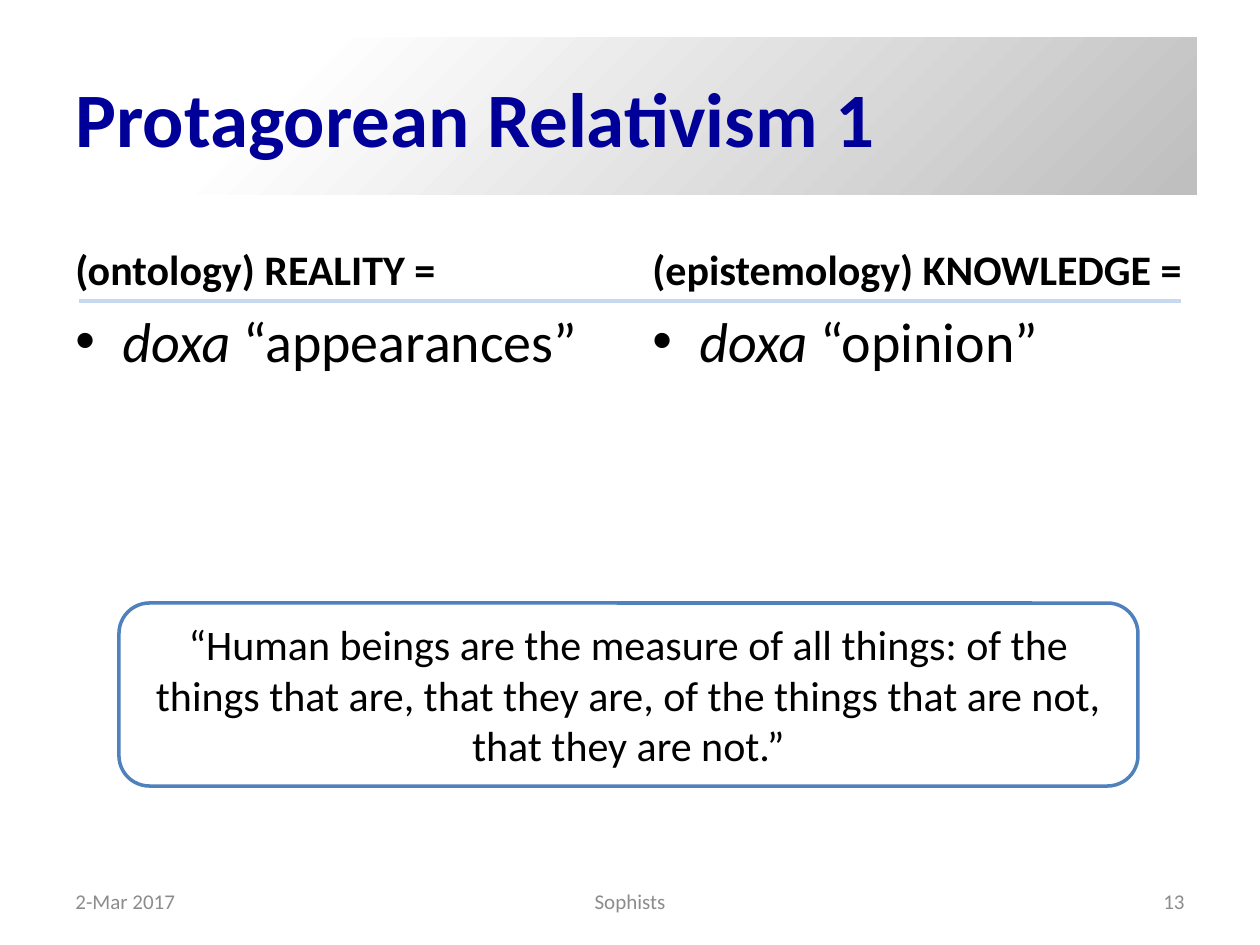
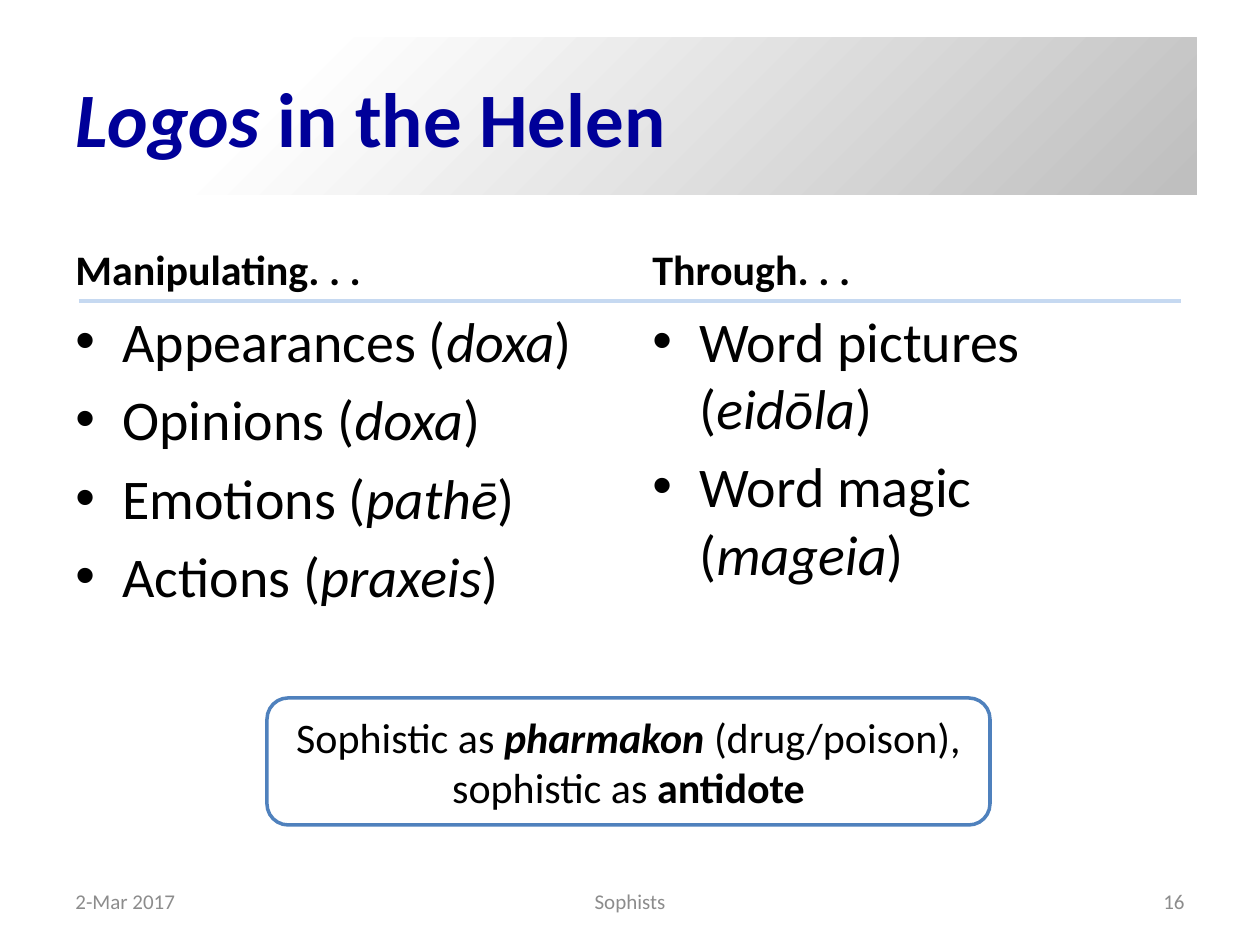
from dataclasses import dataclass

from lxml import etree
from pptx import Presentation
from pptx.dml.color import RGBColor
from pptx.enum.shapes import MSO_CONNECTOR, MSO_SHAPE
from pptx.enum.text import MSO_ANCHOR, PP_ALIGN
from pptx.oxml.ns import qn
from pptx.util import Pt

RECT, ROUND = MSO_SHAPE.RECTANGLE, MSO_SHAPE.ROUNDED_RECTANGLE
STRAIGHT = MSO_CONNECTOR.STRAIGHT
TOP, MIDDLE, BOTTOM = MSO_ANCHOR.TOP, MSO_ANCHOR.MIDDLE, MSO_ANCHOR.BOTTOM
LEFT, CENTER, RIGHT = PP_ALIGN.LEFT, PP_ALIGN.CENTER, PP_ALIGN.RIGHT


@dataclass(frozen=True)
class Theme:
    font: str = "Calibri"
    navy: str = "000099"
    ink: str = "000000"
    gray: str = "8C8C8C"
    paper: str = "FFFFFF"
    silver: str = "BFBFBF"
    rule: str = "C6D9F1"
    edge: str = "4F81BD"
    title: int = 44
    body: int = 32
    head: int = 24
    foot: int = 12
    stroke: int = 2


THEME = Theme()
WIDE, HIGH = 1260, 945
EDGE = 63
COLUMN = 557
INDENT = 47
ITALIC = {"italic": True}
BOLD = {"bold": True}


def px(n):
    return round(n * 914400 / 126)


def rgb(code):
    return RGBColor.from_string(code)


def put(target, values):
    for name, value in values.items():
        setattr(target, name, value)


def write(frame, paras, size, color=THEME.ink, anchor=TOP, align=LEFT,
          space=0, bullet=False, style=None):
    put(frame, {"word_wrap": True, "vertical_anchor": anchor})
    for i, runs in enumerate(paras):
        para = frame.add_paragraph() if i else frame.paragraphs[0]
        put(para, {"alignment": align, "space_before": Pt(space)})
        if bullet:
            mark(para)
        for text, extra in runs:
            if text == "\n":
                para.add_line_break()
                continue
            run = para.add_run()
            run.text = text
            look = {"name": THEME.font, "size": Pt(size)}
            put(run.font, look | (style or {}) | extra)
            run.font.color.rgb = rgb(color)


def mark(para):
    props = para._p.get_or_add_pPr()
    props.set("marL", str(px(INDENT)))
    props.set("indent", str(-px(INDENT)))
    etree.SubElement(props, qn("a:buFont"), typeface="Arial")
    etree.SubElement(props, qn("a:buChar"), char="•")


def label(slide, box, paras, size, **look):
    item = slide.shapes.add_textbox(*map(px, box))
    write(item.text_frame, paras, size, **look)


def shape(slide, kind, box):
    item = slide.shapes.add_shape(kind, *map(px, box))
    item.shadow.inherit = False
    return item


def rule(slide):
    y = px(301)
    line = slide.shapes.add_connector(STRAIGHT, px(79), y, px(WIDE - 79), y)
    line.line.color.rgb = rgb(THEME.rule)
    line.line.width = Pt(THEME.stroke)
    etree.SubElement(line._element.spPr, qn("a:effectLst"))


def banner(slide, runs):
    band = shape(slide, RECT, (EDGE, 38, WIDE - 2 * EDGE, 157))
    band.line.fill.background()
    band.fill.gradient()
    band.fill.gradient_angle = 315
    stops = ((0.2, THEME.paper), (0.99, THEME.silver))
    for stop, (place, color) in zip(band.fill.gradient_stops, stops):
        stop.position = place
        stop.color.rgb = rgb(color)
    write(band.text_frame, [runs], THEME.title, color=THEME.navy,
          anchor=MIDDLE, style=BOLD)


def column(slide, x, head, items):
    label(slide, (x, 212, COLUMN, 88), [[(head, {})]], THEME.head,
          anchor=BOTTOM, style=BOLD)
    label(slide, (x, 300, COLUMN, 544), items, THEME.body,
          space=THEME.body * 0.2, bullet=True)


def quote(slide, box, runs):
    card = shape(slide, ROUND, box)
    card.fill.solid()
    card.fill.fore_color.rgb = rgb(THEME.paper)
    card.line.color.rgb = rgb(THEME.edge)
    card.line.width = Pt(THEME.stroke)
    write(card.text_frame, [runs], THEME.head, anchor=MIDDLE, align=CENTER,
          space=THEME.head / 2)


def footer(slide, page):
    side, mid = 294, 400
    parts = (
        (EDGE, side, "2-Mar 2017", LEFT),
        ((WIDE - mid) // 2, mid, "Sophists", CENTER),
        (WIDE - EDGE - side, side, page, RIGHT),
    )
    for x, width, text, align in parts:
        label(slide, (x, 876, width, 50), [[(text, {})]], THEME.foot,
              color=THEME.gray, anchor=MIDDLE, align=align)


def build(deck, title, columns, box, saying, page):
    slide = deck.slides.add_slide(deck.slide_layouts[6])
    rule(slide)
    banner(slide, title)
    for x, (head, items) in zip((EDGE, WIDE - EDGE - COLUMN), columns):
        column(slide, x, head, items)
    quote(slide, box, saying)
    footer(slide, page)


def gloss(word, greek):
    return [(f"{word} (", {}), (greek, ITALIC), (")", {})]


def doxa(sense):
    return [("doxa", ITALIC), (f" “{sense}”", {})]


def main():
    deck = Presentation()
    put(deck, {"slide_width": px(WIDE), "slide_height": px(HIGH)})
    build(
        deck,
        [("Protagorean Relativism 1", {})],
        [("(ontology) REALITY =", [doxa("appearances")]),
         ("(epistemology) KNOWLEDGE =", [doxa("opinion")])],
        (119, 603, 1019, 183),
        [("“Human beings are the measure of all things: of the things that "
          "are, that they are, of the things that are not, that they are "
          "not.”", {})],
        "13",
    )
    build(
        deck,
        [("Logos", ITALIC), (" in the Helen", {})],
        [("Manipulating. . .",
          [gloss("Appearances", "doxa"), gloss("Opinions", "doxa"),
           gloss("Emotions", "pathē"), gloss("Actions", "praxeis")]),
         ("Through. . .",
          [gloss("Word pictures", "eidōla"), gloss("Word magic", "mageia")])],
        (267, 698, 723, 127),
        [("Sophistic as ", {}), ("pharmakon", BOLD | ITALIC),
         (" (drug/poison),", {}), ("\n", {}), ("sophistic as ", {}),
         ("antidote", BOLD)],
        "16",
    )
    deck.save("out.pptx")


if __name__ == "__main__":
    main()
